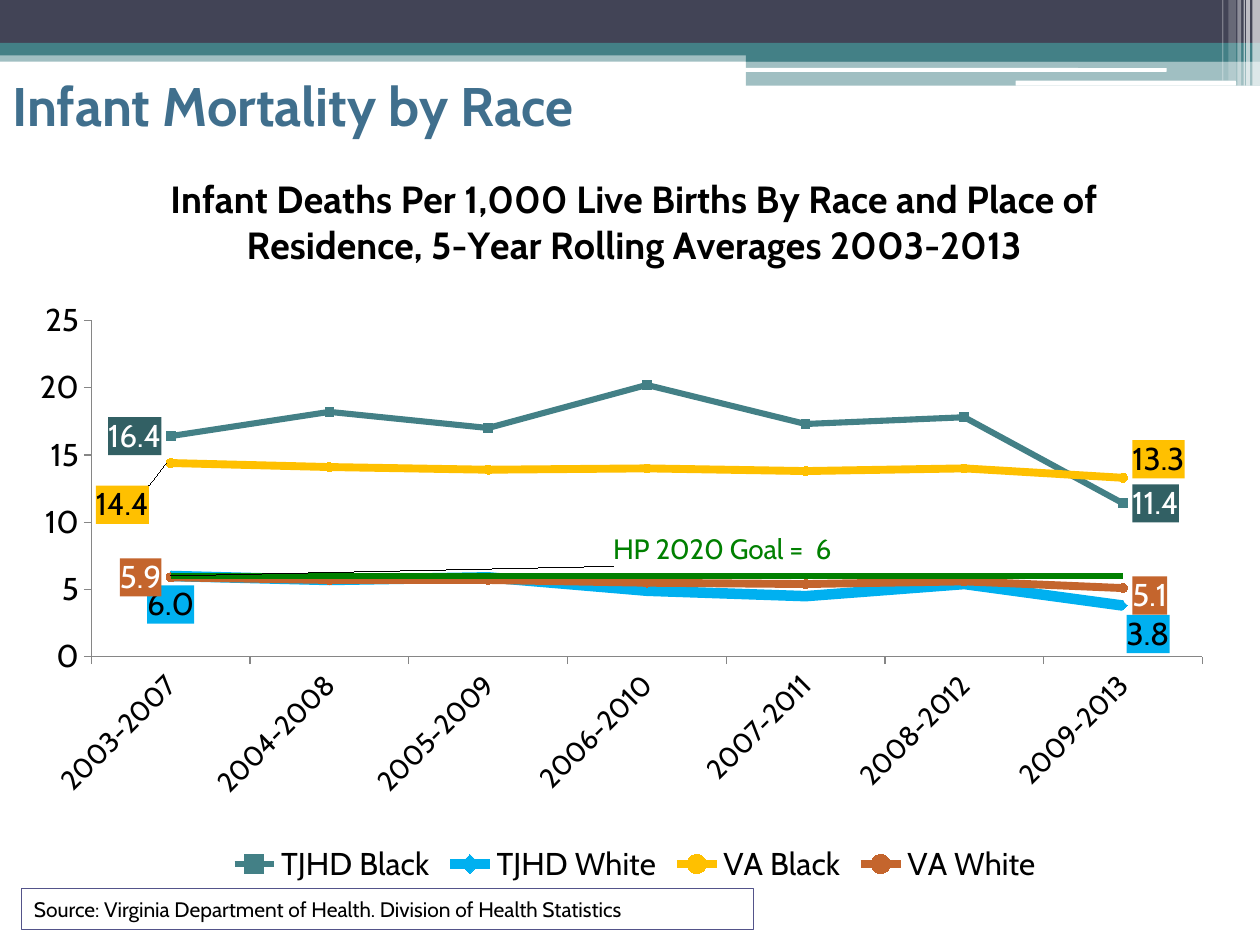
from lxml import etree
from pptx import Presentation
from pptx.chart.data import CategoryChartData
from pptx.dml.color import RGBColor
from pptx.enum.chart import XL_CHART_TYPE, XL_LEGEND_POSITION, XL_MARKER_STYLE as MARKER, XL_TICK_MARK
from pptx.enum.chart import XL_LABEL_POSITION as POS
from pptx.enum.shapes import MSO_SHAPE as SHAPE
from pptx.enum.text import MSO_ANCHOR, PP_ALIGN
from pptx.oxml import parse_xml
from pptx.oxml.ns import nsdecls, qn
from pptx.util import Inches, Pt

FONT = "Cabin"
WHITE = RGBColor(0xFF, 0xFF, 0xFF)
BLACK = RGBColor(0, 0, 0)
SLATE = RGBColor(0x42, 0x44, 0x56)
TEAL = RGBColor(0x43, 0x80, 0x86)
DARK_TEAL = RGBColor(0x32, 0x60, 0x64)
TITLE_BLUE = RGBColor(0x40, 0x6F, 0x8D)
INDIGO = RGBColor(0x53, 0x54, 0x8A)
SKY = RGBColor(0x00, 0xB0, 0xF0)
GOLD = RGBColor(0xFF, 0xC0, 0x00)
RUST = RGBColor(0xC4, 0x65, 0x2D)
GREEN = RGBColor(0x00, 0x80, 0x00)
GRAY = RGBColor(0x86, 0x86, 0x86)


def write(frame, text, size=18, color=BLACK, bold=False, align=PP_ALIGN.LEFT):
    paragraph = frame.paragraphs[0]
    paragraph.alignment = align
    run = paragraph.add_run()
    run.text = text
    run.font.name, run.font.size, run.font.bold = FONT, Pt(size), bold
    run.font.color.rgb = color


def manual_layout(**settings):
    layout = parse_xml(f"<c:layout {nsdecls('c')}><c:manualLayout/></c:layout>")
    for tag, value in settings.items():
        etree.SubElement(layout[0], qn(f"c:{tag}")).set("val", str(value))
    return layout


prs = Presentation()
prs.slide_width, prs.slide_height = Inches(10), Inches(7.5)
slide = prs.slides.add_slide(prs.slide_layouts[5])

# Header bands: left, top, width, height, colour, opacity in percent, outline
bands = [
    (0, 0.4, 10, 0.09, TEAL, 50, SHAPE.RECTANGLE),
    (0, 0, 10, 0.34, SLATE, 100, SHAPE.RECTANGLE),
    (0, 0.34, 10, 0.1, TEAL, 100, SHAPE.RECTANGLE),
    (5.92, 0.39, 4.08, 0.1, TEAL, 100, SHAPE.RECTANGLE),
    (5.92, 0.48, 4.08, 0.2, TEAL, 50, SHAPE.RECTANGLE),
    (5.91, 0.54, 3.35, 0.03, WHITE, 100, SHAPE.ROUNDED_RECTANGLE),
    (8.06, 0.64, 1.75, 0.04, WHITE, 100, SHAPE.ROUNDED_RECTANGLE),
]
# Pale stripes at the right end of the header
stripes = [(9.94, 0.06, 0.68, 65), (9.89, 0.03, 0.68, 65), (9.87, 0.01, 0.68, 60),
           (9.82, 0.03, 0.68, 40), (9.75, 0.06, 0.64, 20), (9.7, 0.01, 0.64, 30)]
bands += [(left, 0, width, height, WHITE, opacity, SHAPE.RECTANGLE)
          for left, width, height, opacity in stripes]
for left, top, width, height, color, opacity, outline in bands:
    band = slide.shapes.add_shape(outline, Inches(left), Inches(top), Inches(width), Inches(height))
    band.shadow.inherit = False
    band.line.fill.background()
    band.fill.solid()
    band.fill.fore_color.rgb = color
    if opacity < 100:
        fill_color = band._element.spPr.find(".//" + qn("a:srgbClr"))
        etree.SubElement(fill_color, qn("a:alpha")).set("val", str(opacity * 1000))

# Title
title = slide.shapes.title
title.left, title.top, title.width, title.height = Inches(0), Inches(0.42), Inches(8.33), Inches(0.83)
title.text_frame.vertical_anchor = MSO_ANCHOR.MIDDLE
write(title.text_frame, "Infant Mortality by Race", size=31, color=TITLE_BLUE, bold=True)

# Source note
source = slide.shapes.add_shape(SHAPE.RECTANGLE, Inches(0.17), Inches(7.05), Inches(5.81), Inches(0.33))
source.shadow.inherit = False
source.fill.solid()
source.fill.fore_color.rgb = WHITE
source.line.color.rgb = INDIGO
source.line.width = Pt(0.75)
write(source.text_frame, "Source: Virginia Department of Health. Division of Health Statistics", size=12)

# Mortality rates: name, values, colour, line width, marker
rates = [
    ("TJHD Black", (16.4, 18.2, 17.0, 20.2, 17.3, 17.8, 11.4), TEAL, 3.5, MARKER.SQUARE),
    ("TJHD White", (6.0, 5.7, 5.9, 4.9, 4.5, 5.4, 3.8), SKY, 6, MARKER.DIAMOND),
    ("VA Black", (14.4, 14.1, 13.9, 14.0, 13.8, 14.0, 13.3), GOLD, 4.5, MARKER.CIRCLE),
    ("VA White", (5.9, 5.7, 5.7, 5.5, 5.4, 5.6, 5.1), RUST, 4.5, MARKER.CIRCLE),
    ("Series 5", (6,) * 7, GREEN, 3, MARKER.NONE),
]
data = CategoryChartData()
data.categories = [f"{year}-{year + 4}" for year in range(2003, 2010)]
for name, values, *_ in rates:
    data.add_series(name, values)
chart = slide.shapes.add_chart(XL_CHART_TYPE.LINE_MARKERS, Inches(0.08), Inches(1.14),
                               Inches(9.92), Inches(5.92), data).chart
chart.font.name, chart.font.size = FONT, Pt(18)
chart.font.color.rgb = BLACK
write(chart.chart_title.text_frame,
      "Infant Deaths Per 1,000 Live Births By Race and Place of Residence, 5-Year Rolling Averages 2003-2013",
      size=21.6, bold=True, align=PP_ALIGN.CENTER)
chart.chart_title.include_in_layout = False
plot_area = chart._chartSpace.chart.plotArea
for old_layout in plot_area.findall(qn("c:layout")):
    plot_area.remove(old_layout)
plot_area.insert(0, manual_layout(layoutTarget="inner", xMode="edge", yMode="edge",
                                  x=0.065, y=0.237, w=0.889, h=0.451))

# Axes
rate_axis, period_axis = chart.value_axis, chart.category_axis
for axis, size in ((rate_axis, 18), (period_axis, 16)):
    axis.has_major_gridlines = False
    axis.major_tick_mark = XL_TICK_MARK.OUTSIDE
    axis.format.line.color.rgb = GRAY
    axis.tick_labels.font.size = Pt(size)
rate_axis.minimum_scale, rate_axis.maximum_scale, rate_axis.major_unit = 0, 25, 5
rate_axis.tick_labels.number_format = "0"
rate_axis.tick_labels.number_format_is_linked = False
period_axis._element.txPr.bodyPr.set("rot", "-2700000")

# Legend without the goal line
chart.has_legend = True
legend = chart.legend
legend.position = XL_LEGEND_POSITION.BOTTOM
legend.include_in_layout = False
legend.font.size = Pt(18)
legend_position = legend._element.find(qn("c:legendPos"))
legend_position.addnext(manual_layout(xMode="edge", yMode="edge", x=0.09, y=0.89, w=0.77, h=0.07))
legend_position.addnext(parse_xml(
    f"<c:legendEntry {nsdecls('c')}><c:idx val='4'/><c:delete val='1'/></c:legendEntry>"))

# Lines and markers
lines = list(chart.plots[0].series)
for line, (_, _, color, width, marker) in zip(lines, rates):
    line.smooth = False
    line.format.line.color.rgb = color
    line.format.line.width = Pt(width)
    line.marker.style = marker
    line.marker.size = 5
    line.marker.format.fill.solid()
    line.marker.format.fill.fore_color.rgb = color
    line.marker.format.line.color.rgb = color
    line.data_labels.show_value = False

# End labels: line, point, box colour, text colour, side, shift in chart fractions
end_labels = [
    (0, 0, DARK_TEAL, WHITE, POS.LEFT, None), (0, 6, DARK_TEAL, WHITE, POS.RIGHT, None),
    (1, 0, SKY, BLACK, POS.BELOW, None), (1, 6, SKY, BLACK, POS.BELOW, (0.02, 0)),
    (2, 0, GOLD, BLACK, POS.LEFT, (-0.01, 0.056)), (2, 6, GOLD, BLACK, POS.RIGHT, (0, -0.025)),
    (3, 0, RUST, WHITE, POS.LEFT, None), (3, 6, RUST, WHITE, POS.RIGHT, (0, 0.01)),
    (4, 0, None, GREEN, POS.RIGHT, (0.35, -0.035)),
]
for row, point, box, color, side, shift in end_labels:
    label = lines[row].points[point].data_label
    if box is None:
        write(label.text_frame, "HP 2020 Goal =  6", size=16, color=color)
    else:
        label.font.name, label.font.size = FONT, Pt(18)
        label.font.color.rgb = color
        text_format = label._dLbl.find(qn("c:txPr"))
        text_format.addprevious(parse_xml(
            f"<c:numFmt {nsdecls('c')} formatCode='0.0' sourceLinked='0'/>"))
        text_format.addprevious(parse_xml(
            f"<c:spPr {nsdecls('c', 'a')}><a:solidFill><a:srgbClr val='{box}'/></a:solidFill></c:spPr>"))
    label.position = side
    if shift:
        label._dLbl.find(qn("c:idx")).addnext(manual_layout(x=shift[0], y=shift[1]))

prs.save("out.pptx")
